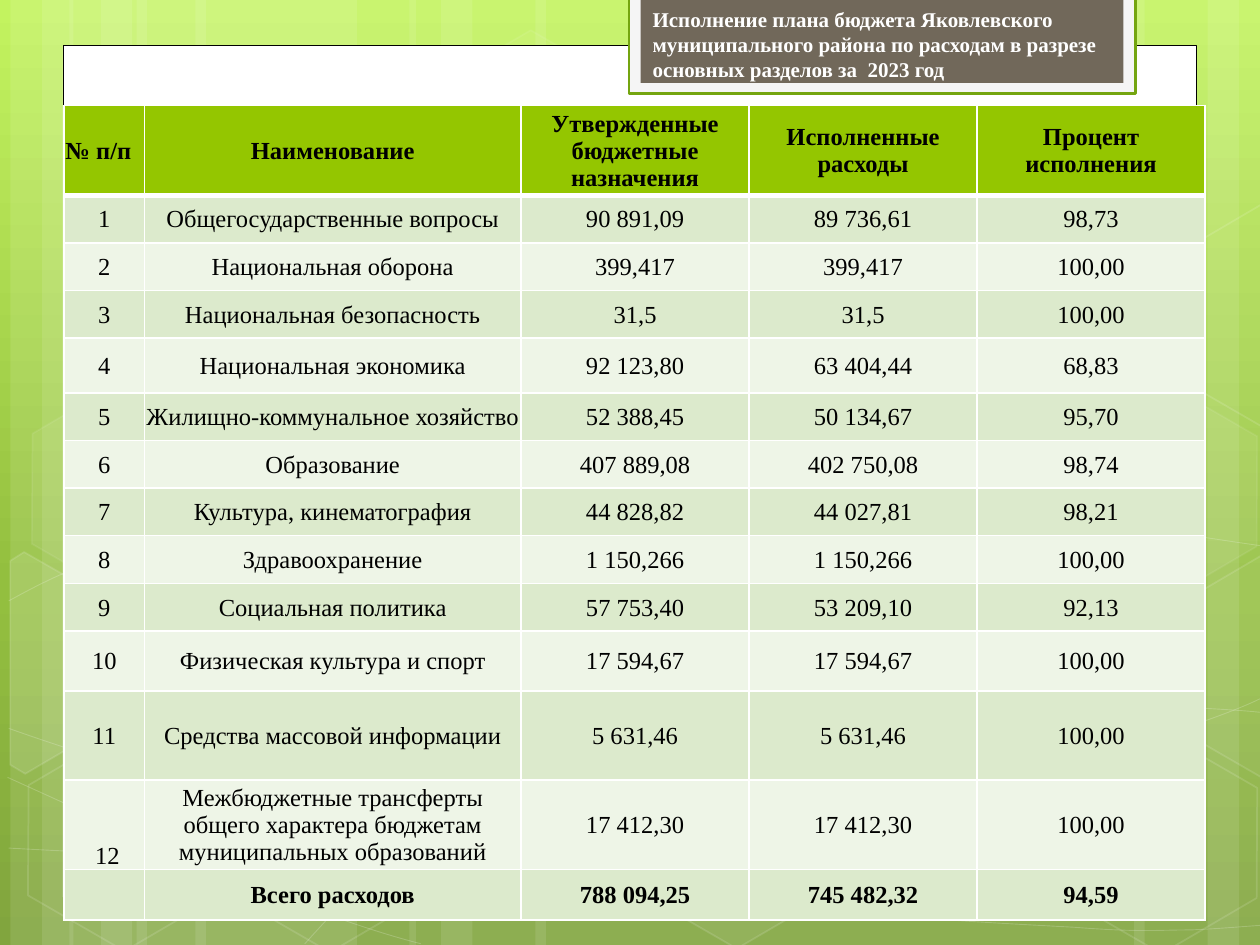
from copy import deepcopy
from math import cos, radians, sin
from typing import NamedTuple, Optional

from lxml import etree
from pptx import Presentation, util as u
from pptx.dml.color import RGBColor
from pptx.enum import shapes, text
from pptx.oxml.ns import qn

Pt = u.Pt
WHITE = RGBColor(0xFF, 0xFF, 0xFF)
BLACK = RGBColor(0x00, 0x00, 0x00)
FRAME_FILL = RGBColor(0xF5, 0xF5, 0xF5)
FRAME_LINE = RGBColor(0x74, 0xA5, 0x10)
BROWN = RGBColor(0x71, 0x68, 0x5A)
HEADER = RGBColor(0x94, 0xC6, 0x00)
ROW_TINTS = (RGBColor(0xDC, 0xEA, 0xCC), RGBColor(0xEE, 0xF5, 0xE7))
GRADIENT = ((0, RGBColor(0xC3, 0xF3, 0x5F)), (62, RGBColor(0x93, 0xBF, 0x3F)),
            (100, RGBColor(0x81, 0xA5, 0x3E)))
FONT = "Times New Roman"
PAGE_WIDTH, PAGE_HEIGHT = 720, 540
TILT = 30


class Style(NamedTuple):
    fill: Optional[RGBColor] = None
    line: Optional[RGBColor] = None
    weight: float = 1
    fill_alpha: int = 100
    line_alpha: int = 100


class Band(NamedTuple):
    left: float
    width: float
    rotation: int = 0


class Curve(NamedTuple):
    knots: list  # start, then two control points and an end point per segment
    straight: Optional[int] = None  # index of a knot reached by a straight line


class Hexagon(NamedTuple):
    left: float
    top: float
    fill_alpha: int
    line_alpha: int


class Polygon(NamedTuple):
    points: list
    center: tuple
    fill_alpha: int


BANDS = [Band(78, 126), Band(6, 36), Band(24, 60), Band(111.6, 126), Band(39.6, 36),
         Band(57.6, 60), Band(528, 126, 180), Band(690, 36, 180), Band(648, 60, 180),
         Band(306, 222), Band(234, 36), Band(252, 60)]

CURVES = [
    Curve([(5, 484.6), (43.9, 486.7), (82.8, 488.9), (136.8, 488.2), (190.8, 487.4),
           (257.8, 486), (329.8, 478.8), (401.8, 471.6), (504, 457.9), (570.2, 444.2),
           (635.8, 430.6), (703.4, 409), (725, 396.7)]),
    Curve([(5, 343.4), (25.9, 331.9), (46.8, 321.1), (87.1, 310.3), (128.2, 299.5),
           (186.5, 283.7), (249.8, 278.6), (313.9, 273.6), (391.7, 272.9), (470.9, 278.6),
           (550.1, 284.4), (681.8, 306.7), (725, 312.5)]),
    Curve([(4.3, 444.2), (91.4, 483.8), (177.8, 523.4), (240.5, 539.3)]),
    Curve([(5, 416.2), (27.4, 424.1), (50.4, 432), (92.2, 443.5), (133.9, 454.3),
           (196.6, 472.3), (257, 484.6), (316.8, 496.8), (392.4, 509.8), (452.2, 517),
           (511.9, 524.9), (576, 527.8), (614.2, 529.9), (651.6, 532.8), (661.7, 531.4),
           (680.4, 531.4), (699.1, 530.6), (712.1, 529.2), (725, 528.5)]),
    Curve([(174.2, 539.3), (187.2, 524.9), (200.2, 510.5), (217.4, 497.5), (234.7, 484.6),
           (259.2, 470.2), (279.4, 460.1), (299.5, 450), (311.8, 445.7), (338.4, 438.5),
           (364.3, 431.3), (412.6, 421.2), (437.8, 416.2), (463.7, 411.1), (467.3, 411.1),
           (489.6, 409.7), (511.9, 407.5), (547.2, 405.4), (571.7, 404.6), (596.9, 403.9),
           (637.9, 404.6), (637.9, 404.6), (686.2, 404.6), (699.1, 405.4), (711.4, 406.1),
           (717.8, 406.8), (724.3, 407.5), (722.2, 406.8), (724.3, 407.5)], straight=22),
]

HEXAGONS = [Hexagon(240.5, 25.9, 4, 8), Hexagon(357.8, 424.1, 6, 12),
            Hexagon(7.9, 425.5, 0, 12), Hexagon(10.1, 224.6, 7, 8),
            Hexagon(125.3, 426.2, 0, 12), Hexagon(542.2, 326.2, 10, 12),
            Hexagon(600.5, 427, 0, 12), Hexagon(600.5, 226.1, 7, 8)]

LEFT_EDGE = [(5.8, 320.4), (13.7, 315.4), (69.1, 347), (68.4, 410.4), (14.4, 442.1), (5.8, 437)]
RIGHT_EDGE = [(666.7, 349.2), (720.7, 317.5), (726.5, 321.1), (726.5, 441.4), (721.4, 444.2),
              (666.7, 412.6)]
RIGHT_RISE = 200.6
POLYGONS = [Polygon(LEFT_EDGE, (25.9, 385.2), 10), Polygon(RIGHT_EDGE, (709.2, 374.4), 4),
            Polygon([(x, y - RIGHT_RISE) for x, y in RIGHT_EDGE], (709.2, 374.4 - RIGHT_RISE), 0)]

TITLE = ("Исполнение плана бюджета Яковлевского муниципального района "
         "по расходам в разрезе основных разделов за  2023 год")
ROWS = [
    ("№ п/п", "Наименование", "Утвержденные бюджетные назначения", "Исполненные расходы",
     "Процент исполнения"),
    ("1", "Общегосударственные вопросы", "90 891,09", "89 736,61", "98,73"),
    ("2", "Национальная оборона", "399,417", "399,417", "100,00"),
    ("3", "Национальная безопасность", "31,5", "31,5", "100,00"),
    ("4", "Национальная экономика", "92 123,80", "63 404,44", "68,83"),
    ("5", "Жилищно-коммунальное хозяйство", "52 388,45", "50 134,67", "95,70"),
    ("6", "Образование", "407 889,08", "402 750,08", "98,74"),
    ("7", "Культура, кинематография", "44 828,82", "44 027,81", "98,21"),
    ("8", "Здравоохранение", "1 150,266", "1 150,266", "100,00"),
    ("9", "Социальная политика", "57 753,40", "53 209,10", "92,13"),
    ("10", "Физическая культура и спорт", "17 594,67", "17 594,67", "100,00"),
    ("11", "Средства массовой информации", "5 631,46", "5 631,46", "100,00"),
    (" 12", "Межбюджетные трансферты общего характера бюджетам муниципальных образований",
     "17 412,30", "17 412,30", "100,00"),
    ("", "Всего расходов", "788 094,25", "745 482,32", "94,59"),
]
COLUMN_WIDTHS = [45.8, 215.3] + [130.3] * 3
ROW_HEIGHTS = [50.6] + [27.2] * 3 + [31.5] + [27.2] * 5 + [34.3, 51, 51, 28.8]


def set_alpha(holder, percent: int) -> None:
    if percent < 100:
        color = holder.find(qn("a:solidFill"))[0]
        etree.SubElement(color, qn("a:alpha")).set("val", str(percent * 1000))


def apply_style(shape, style: Style) -> None:
    shape.shadow.inherit = False
    if style.fill is None or style.fill_alpha == 0:
        shape.fill.background()
    else:
        shape.fill.solid()
        shape.fill.fore_color.rgb = style.fill
        set_alpha(shape.element.spPr, style.fill_alpha)
    if style.line is None:
        shape.line.fill.background()
    else:
        shape.line.color.rgb = style.line
        shape.line.width = Pt(style.weight)
        set_alpha(shape.element.spPr.find(qn("a:ln")), style.line_alpha)


def add_box(page, kind, left: float, top: float, width: float, height: float, style: Style):
    box = page.shapes.add_shape(kind, Pt(left), Pt(top), Pt(width), Pt(height))
    apply_style(box, style)
    return box


def add_outline(page, points: list, closed: bool, style: Style):
    corners = [(Pt(x), Pt(y)) for x, y in points]
    builder = page.shapes.build_freeform(*corners[0], scale=1.0)
    builder.add_line_segments(corners[1:], close=closed)
    outline = builder.convert_to_shape()
    apply_style(outline, style)
    return outline


def add_curve(page, curve: Curve) -> None:
    outline = add_outline(page, curve.knots, False, Style(line=WHITE, weight=0.5, line_alpha=20))
    steps = list(outline.element.iter(qn("a:lnTo")))
    if curve.straight is not None:
        steps.pop(curve.straight - 1)
    for first in range(0, len(steps), 3):
        bend = etree.Element(qn("a:cubicBezTo"))
        steps[first].addprevious(bend)
        for step in steps[first:first + 3]:
            bend.append(step[0])
            step.getparent().remove(step)


def add_tilted_polygon(page, item: Polygon) -> None:
    center_x, center_y = item.center
    c, s = cos(radians(TILT)), sin(radians(TILT))
    upright = [(center_x + c * (x - center_x) + s * (y - center_y),
                center_y - s * (x - center_x) + c * (y - center_y)) for x, y in item.points]
    outline = add_outline(page, upright, True, Style(WHITE, WHITE, 1, item.fill_alpha, 12))
    outline.rotation = TILT


def paint_background(page) -> None:
    fill = page.background.fill
    fill.gradient()
    fill.gradient_angle = 270
    stops = page.element.find(".//" + qn("a:gsLst"))
    stops.insert(1, deepcopy(stops[0]))
    for stop, (position, color) in zip(stops, GRADIENT):
        stop.set("pos", str(position * 1000))
        for child in list(stop):
            stop.remove(child)
        etree.SubElement(stop, qn("a:srgbClr")).set("val", str(color))


def format_text(para, size: float, color: RGBColor, bold: bool) -> None:
    for font in [para.font] + [span.font for span in para.runs]:
        font.name, font.size, font.bold = FONT, Pt(size), bold
        font.color.rgb = color


def add_borders(cell, top: float, bottom: float) -> None:
    properties = cell._tc.get_or_add_tcPr()
    for index, (side, weight) in enumerate((("L", 1), ("R", 1), ("T", top), ("B", bottom))):
        line = etree.Element(qn("a:ln" + side), w=str(Pt(weight)))
        solid = etree.SubElement(line, qn("a:solidFill"))
        etree.SubElement(solid, qn("a:srgbClr")).set("val", str(WHITE))
        properties.insert(index, line)


def fill_cell(cell, row: int, column: int) -> None:
    cell.fill.solid()
    cell.fill.fore_color.rgb = HEADER if row == 0 else ROW_TINTS[(row - 1) % 2]
    cell.margin_left = cell.margin_right = cell.margin_top = Pt(0.7)
    cell.margin_bottom = Pt(0)
    low = (row, column) == (len(ROWS) - 2, 0)
    cell.vertical_anchor = text.MSO_ANCHOR.BOTTOM if low else text.MSO_ANCHOR.MIDDLE
    cell.text_frame.text = ROWS[row][column]
    para = cell.text_frame.paragraphs[0]
    para.alignment = text.PP_ALIGN.LEFT if row == column == 0 else text.PP_ALIGN.CENTER
    format_text(para, 14, BLACK, row in (0, len(ROWS) - 1))
    add_borders(cell, 3 if row == 1 else 1, 3 if row == 0 else 1)


def add_budget_table(page) -> None:
    table = page.shapes.add_table(len(ROWS), len(COLUMN_WIDTHS), Pt(36.7), Pt(60.4),
                                  Pt(sum(COLUMN_WIDTHS)), Pt(sum(ROW_HEIGHTS))).table
    for column, width in zip(table.columns, COLUMN_WIDTHS):
        column.width = Pt(width)
    for row, height in enumerate(ROW_HEIGHTS):
        table.rows[row].height = Pt(height)
        for column in range(len(COLUMN_WIDTHS)):
            fill_cell(table.cell(row, column), row, column)


def main() -> None:
    deck = Presentation()
    deck.slide_width, deck.slide_height = Pt(PAGE_WIDTH), Pt(PAGE_HEIGHT)
    page = deck.slides.add_slide(deck.slide_layouts[6])
    rectangle = shapes.MSO_SHAPE.RECTANGLE

    # Backdrop: gradient, light bands, curves and hexagons
    paint_background(page)
    for band in BANDS:
        box = add_box(page, rectangle, band.left, 0, band.width, PAGE_HEIGHT,
                      Style(WHITE, fill_alpha=10))
        box.rotation = band.rotation
    for curve in CURVES:
        add_curve(page, curve)
    for item in HEXAGONS:
        box = add_box(page, shapes.MSO_SHAPE.HEXAGON, item.left, item.top, 126, 109.4,
                      Style(WHITE, WHITE, 1, item.fill_alpha, item.line_alpha))
        box.adjustments[0], box.adjustments[1] = 0.285, 1.155
        box.rotation = TILT
    for item in POLYGONS:
        add_tilted_polygon(page, item)

    # Sheet and title plate
    add_box(page, rectangle, 36, 26, 648, 486.7, Style(WHITE, BLACK, 0.5))
    add_box(page, rectangle, 359.5, -1.4, 289.4, 54.7, Style(FRAME_FILL, FRAME_LINE, 1.5))
    add_box(page, rectangle, 366, -1.4, 276, 48.8, Style(BROWN))
    title = page.shapes.add_textbox(Pt(365.8), Pt(0), Pt(278), Pt(51)).text_frame
    title.word_wrap = True
    title.text = TITLE
    format_text(title.paragraphs[0], 12, WHITE, True)

    # Budget table
    add_budget_table(page)
    deck.save("out.pptx")


if __name__ == "__main__":
    main()
